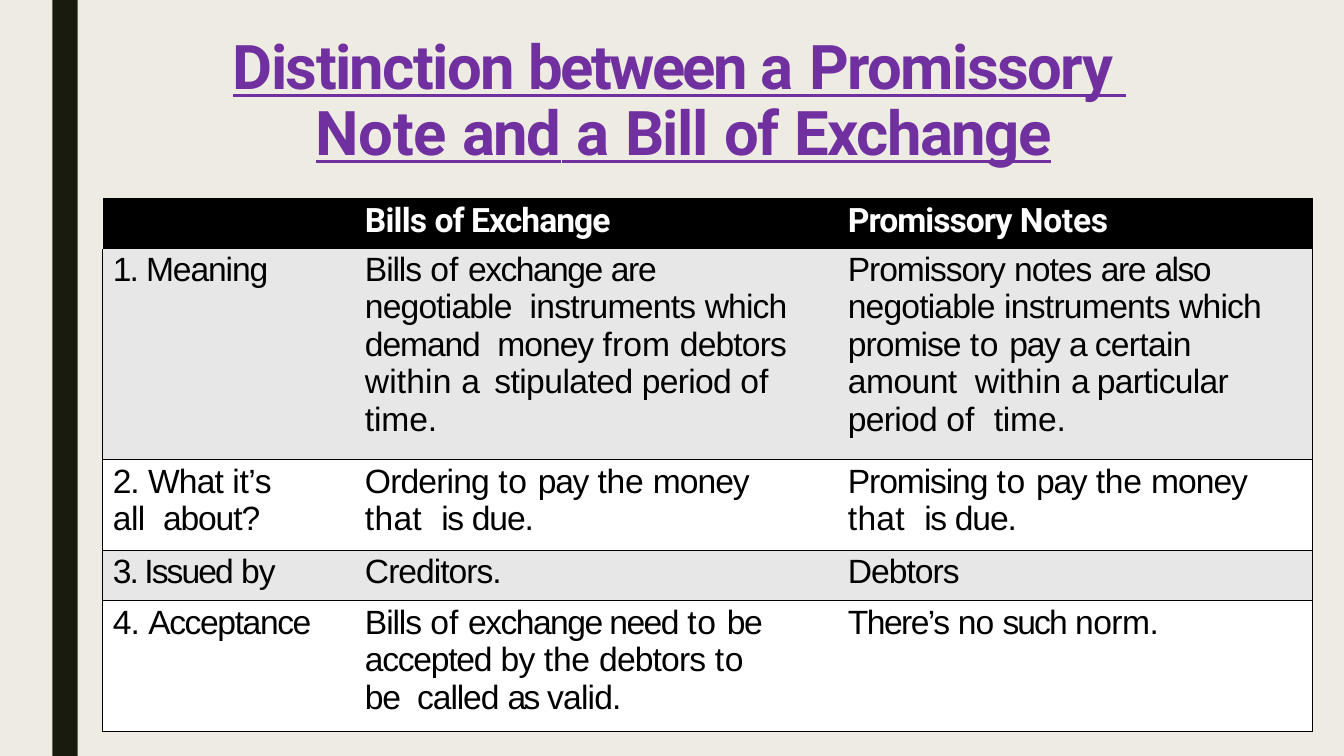
from lxml import etree
from pptx import Presentation, util as u
from pptx.dml.color import RGBColor
from pptx.enum import shapes
from pptx.oxml import ns

COLORS = {"cream": "EEECE2", "bar": "181B0D", "title": "7030A0", "black": "000000",
          "white": "FFFFFF", "band": "E7E7E7"}
NO_STYLE = "{2D5ABB26-0587-4C30-8999-92F81FD0307C}"

# Each run is (text, letter spacing in points).
TITLE = [("Distinction ", -1.2), ("between ", -1.9), ("a", -0.8), (" ", -10.1),
         ("Promissory  ", -1.1), ("Note", -0.3), (" ", -4.4), ("and", -1.1), (" ", -4.2),
         ("a", -0.8), (" ", -4.3), ("Bill", -1.2), (" ", -4.2), ("of", -1.2), (" ", -4.3),
         ("Exchange", -1.2)]
PAY_WHAT_IS_DUE = [("to ", 0.5), ("pay ", -0.9), ("the ", -0.2), ("money ", -0.7),
                   ("that  ", 0.2), ("is ", -1.1), ("due.", -0.8)]
ROWS = [
    [[],
     [("Bills ", -0.6), ("of Exchange", -0.7)],
     [("Promissory ", -0.7), ("Notes", -0.2)]],
    [[("1. ", -1.5), ("Meaning", -0.8)],
     [("Bills ", -0.8), ("of ", 0.1), ("exchange ", -1.1), ("are ", -1), ("negotiable  ", -0.6),
      ("instruments ", -0.5), ("which ", -0.6), ("demand  ", -0.8), ("money ", -0.7),
      ("from ", 0.1), ("debtors ", -0.6), ("within ", 0.1), ("a  ", -1.6),
      ("stipulated ", -0.4), ("period ", -0.5), ("of ", 0.1), ("time.", -0.1)],
     [("Promissory ", -0.8), ("notes ", -0.7), ("are ", -1), ("also  ", -1.1),
      ("negotiable ", -0.6), ("instruments ", -0.5), ("which  ", -0.6), ("promise ", -0.7),
      ("to ", 0.5), ("pay ", -0.9), ("a ", -1.6), ("certain ", -0.5), ("amount  ", -0.4),
      ("within ", 0.1), ("a ", -1.6), ("particular period ", -0.5), ("of  ", 0.1),
      ("time.", -0.1)]],
    [[("2. ", -0.8), ("What ", -0.6), ("it’s ", -0.3), ("all  ", -0.4), ("about?", -0.8)],
     [("Ordering ", -0.6)] + PAY_WHAT_IS_DUE,
     [("Promising ", -0.8)] + PAY_WHAT_IS_DUE],
    [[("3. Issued ", -1.4), ("by", -0.6)],
     [("Creditors.", -0.7)],
     [("Debtors", -0.7)]],
    [[("4. ", -0.7), ("Acceptance", -1)],
     [("Bills ", -0.8), ("of ", 0.1), ("exchange need ", -1.1), ("to ", 0.5),
      ("be  accepted ", -0.9), ("by ", -0.5), ("the ", -0.2), ("debtors ", -0.6), ("to ", 0.5),
      ("be  ", -0.9), ("called ", -0.8), ("as ", -1.9), ("valid.", -0.6)],
     [("There’s ", -1.1), ("no ", -0.7), ("such ", -1.4), ("norm.", -0.4)]],
]
COL_WIDTHS = [2.31, 4.86, 4.83]
ROW_HEIGHTS = [0.51, 2.09, 0.9, 0.5, 1.3]
ROW_FILLS = ["black", "band", "white", "band", "white"]
CELL_TOPS = [0.04, 0.02, 0.03, 0.03, 0.03]
SPACES_BEFORE = [2.5, 1.6, 2.1, 2.1, 2.1]
COL_INDENTS = [0.1, 0.29, 0.22]
COL_RIGHTS = [0.1, 0.3, 0.3]
NARROW_RIGHTS = {(2, 0): 0.45, (4, 1): 0.5}


def rgb(name):
    return RGBColor.from_string(COLORS[name])


def paint(fill, color):
    fill.solid()
    fill.fore_color.rgb = rgb(color)


def add_panel(slide, left, width, color):
    """Add a full-height background strip."""
    sp = slide.shapes.add_shape(shapes.MSO_SHAPE.RECTANGLE, u.Inches(left), 0,
                                u.Inches(width), u.Inches(7.5))
    sp.shadow.inherit = False
    paint(sp.fill, color)
    sp.line.fill.background()


def set_margins(box, top, right=0):
    box.margin_left = box.margin_bottom = 0
    box.margin_top, box.margin_right = u.Inches(top), u.Inches(right)


def write(p, runs, font, size, color, bold, before, left, first=0, underline=None):
    """Fill a paragraph with spaced runs; left and first are indents in inches."""
    p.space_before = u.Pt(before)
    pPr = p._p.get_or_add_pPr()
    pPr.set("marL", str(u.Inches(left)))
    pPr.set("indent", str(u.Inches(first)))
    for words, spacing in runs:
        r = p.add_run()
        r.text = words
        r.font.name, r.font.size = font, u.Pt(size)
        r.font.bold, r.font.underline = bold, underline
        r.font.color.rgb = rgb(color)
        r._r.get_or_add_rPr().set("spc", str(round(spacing * 100)))


def add_title(slide):
    sp = slide.shapes.add_textbox(u.Inches(2.3), u.Inches(0.26), u.Inches(8.89), u.Inches(1.41))
    tf = sp.text_frame
    tf.word_wrap = True
    set_margins(tf, 0.1)
    p = tf.paragraphs[0]
    p.line_spacing = u.Pt(46.9)
    write(p, TITLE, "Roboto", 44, "title", True, 7.5, 0.83, -0.82, True)


def add_borders(cell, sides):
    tcPr = cell._tc.get_or_add_tcPr()
    for side in sides:
        ln = etree.SubElement(tcPr, ns.qn(f"a:ln{side}"), w=str(u.Pt(1)))
        fill = etree.SubElement(ln, ns.qn("a:solidFill"))
        etree.SubElement(fill, ns.qn("a:srgbClr"), val=COLORS["black"])


def border_sides(row, col):
    if row == 0:
        return ""
    return ("L" if col == 0 else "") + ("R" if col == 2 else "") + ("T" if row > 1 else "") + "B"


def add_comparison(slide):
    frame = slide.shapes.add_table(len(ROWS), len(COL_WIDTHS), u.Inches(1.02), u.Inches(1.96),
                                   u.Inches(sum(COL_WIDTHS)), u.Inches(sum(ROW_HEIGHTS)))
    table = frame.table
    table.first_row = table.horz_banding = False
    table._tbl.tblPr.find(ns.qn("a:tableStyleId")).text = NO_STYLE
    for column, width in zip(table.columns, COL_WIDTHS):
        column.width = u.Inches(width)
    for i, runs_by_col in enumerate(ROWS):
        table.rows[i].height = u.Inches(ROW_HEIGHTS[i])
        header = i == 0
        for j, runs in enumerate(runs_by_col):
            cell = table.cell(i, j)
            set_margins(cell, CELL_TOPS[i], NARROW_RIGHTS.get((i, j), COL_RIGHTS[j]))
            add_borders(cell, border_sides(i, j))
            paint(cell.fill, ROW_FILLS[i])
            write(cell.text_frame.paragraphs[0], runs, "Roboto" if header else "Arial", 24,
                  "white" if header else "black", header, SPACES_BEFORE[i], COL_INDENTS[j])


def main():
    prs = Presentation()
    prs.slide_width, prs.slide_height = u.Inches(13.33), u.Inches(7.5)
    slide = prs.slides.add_slide(prs.slide_layouts[6])
    add_panel(slide, 0.77, 12.56, "cream")
    add_panel(slide, 0, 0.52, "cream")
    add_panel(slide, 0.52, 0.25, "bar")
    add_title(slide)
    add_comparison(slide)
    prs.save("out.pptx")


if __name__ == "__main__":
    main()
